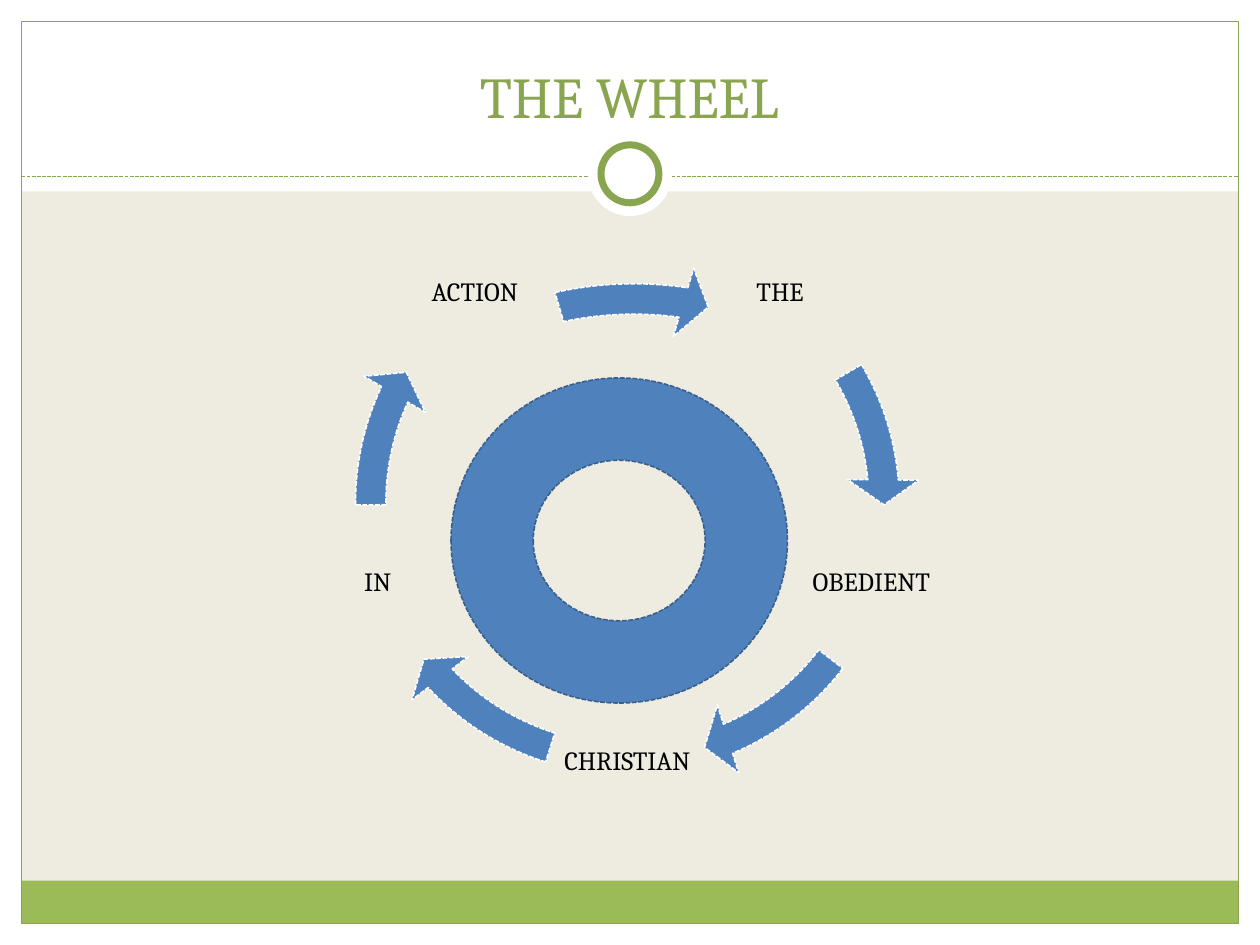
from math import cos, radians, sin

from lxml.etree import SubElement
from pptx import Presentation
from pptx.dml.color import RGBColor
from pptx.enum.dml import MSO_LINE
from pptx.enum.shapes import MSO_CONNECTOR, MSO_SHAPE as Shape
from pptx.enum.text import MSO_ANCHOR as Anchor, PP_ALIGN as Align
from pptx.oxml.ns import qn
from pptx.util import Inches, Pt

TITLE = "THE WHEEL"
WORDS = ["THE", "OBEDIENT ", "CHRISTIAN", "IN ", "ACTION"]
ARROW_ANGLES = [(329.44, 354.89), (37.56, 66.91), (107.49, 136.84),
                (179.52, 204.96), (253.31, 281.09)]

WHITE = RGBColor(0xFF, 0xFF, 0xFF)
BLACK = RGBColor(0, 0, 0)
BEIGE = RGBColor(0xEE, 0xEC, 0xE1)
GREEN = RGBColor(0x9B, 0xBB, 0x59)
DARK_GREEN = RGBColor(0x89, 0xA5, 0x4F)
BLUE = RGBColor(0x4F, 0x81, 0xBD)
DARK_BLUE = RGBColor(0x3A, 0x5F, 0x8C)

FONT = "Cambria"
W, H = 10, 7.5
MARGIN = 0.17
HEADER_H = 1.52
FOOTER_H = 0.34
RULE_Y = 1.4
BADGE_Y = 1.38
CENTER_X, CENTER_Y, RADIUS = 4.98, 3.99, 2.06
WORD_SIZE = 1.24
ARROW_SIZE = 4.64
DEGREE = 0.6

prs = Presentation()
prs.slide_width, prs.slide_height = Inches(W), Inches(H)
slide = prs.slides.add_slide(prs.slide_layouts[6])
slide.background.fill.solid()
slide.background.fill.fore_color.rgb = BEIGE


def centered(cx, cy, w, h):
    return cx - w / 2, cy - h / 2, w, h


def set_line(line, color, width, dashed=False):
    line.color.rgb = color
    line.width = Pt(width)
    if dashed:
        line.dash_style = MSO_LINE.SQUARE_DOT


def add_shape(kind, box, fill=None, line=None, width=0.75, dashed=False, adjust=()):
    sp = slide.shapes.add_shape(kind, *map(Inches, box))
    sp.shadow.inherit = False
    if fill is None:
        sp.fill.background()
    else:
        sp.fill.solid()
        sp.fill.fore_color.rgb = fill
    if line is None:
        sp.line.fill.background()
    else:
        set_line(sp.line, line, width, dashed)
    for i, value in enumerate(adjust):
        sp.adjustments[i] = value
    return sp


def add_text(text, box, size, color, anchor, inset=None):
    tf = slide.shapes.add_textbox(*map(Inches, box)).text_frame
    tf.word_wrap = True
    tf.vertical_anchor = anchor
    if inset is not None:
        tf.margin_left = tf.margin_right = Inches(inset)
        tf.margin_top = tf.margin_bottom = Inches(inset)
    p = tf.paragraphs[0]
    p.text = text
    p.alignment = Align.CENTER
    p.font.name, p.font.size, p.font.color.rgb = FONT, Pt(size), color
    return p


inner_w, inner_h = W - 2 * MARGIN, H - 2 * MARGIN
for box in [(0, H - MARGIN, W, MARGIN), (0, 0, W, HEADER_H),
            (0, 0, MARGIN, H), (W - MARGIN, 0, MARGIN, H)]:
    add_shape(Shape.RECTANGLE, box, WHITE)
add_shape(Shape.RECTANGLE, (MARGIN, H - MARGIN - FOOTER_H, inner_w, FOOTER_H), GREEN)
add_shape(Shape.RECTANGLE, (MARGIN, MARGIN, inner_w, inner_h), line=DARK_GREEN)

rule = slide.shapes.add_connector(
    MSO_CONNECTOR.STRAIGHT, *map(Inches, (MARGIN, RULE_Y, W - MARGIN, RULE_Y)))
set_line(rule.line, DARK_GREEN, 0.75, dashed=True)
SubElement(rule._element.spPr, qn("a:effectLst"))

add_shape(Shape.OVAL, centered(W / 2, BADGE_Y, 0.67, 0.67), WHITE)
add_shape(Shape.OVAL, centered(W / 2, BADGE_Y, 0.46, 0.46), WHITE, DARK_GREEN, 4)
add_text(TITLE, (0.33, 0.25, 9.33, 0.83), 33, DARK_GREEN, Anchor.BOTTOM)

for i, (word, (start, end)) in enumerate(zip(WORDS, ARROW_ANGLES)):
    angle = radians(360 / len(WORDS) * i - 54)
    x, y = CENTER_X + RADIUS * cos(angle), CENTER_Y + RADIUS * sin(angle)
    p = add_text(word, centered(x, y, WORD_SIZE, WORD_SIZE), 15, BLACK, Anchor.MIDDLE, 0.02)
    p.line_spacing = 0.9
    if i < len(WORDS) - 1:
        arrow_box = centered(CENTER_X, CENTER_Y, ARROW_SIZE, ARROW_SIZE)
    else:
        arrow_box = centered(5.03, 4.41, 5.31, ARROW_SIZE)
    add_shape(Shape.CIRCULAR_ARROW, arrow_box, BLUE, WHITE, 0.9, True,
              (0.052, 5.6 * DEGREE, end * DEGREE, start * DEGREE, 0.061))

add_shape(Shape.DONUT, (3.58, 3, 2.67, 2.58), BLUE, DARK_BLUE, 0.9, True, (0.253,))

prs.save("out.pptx")
